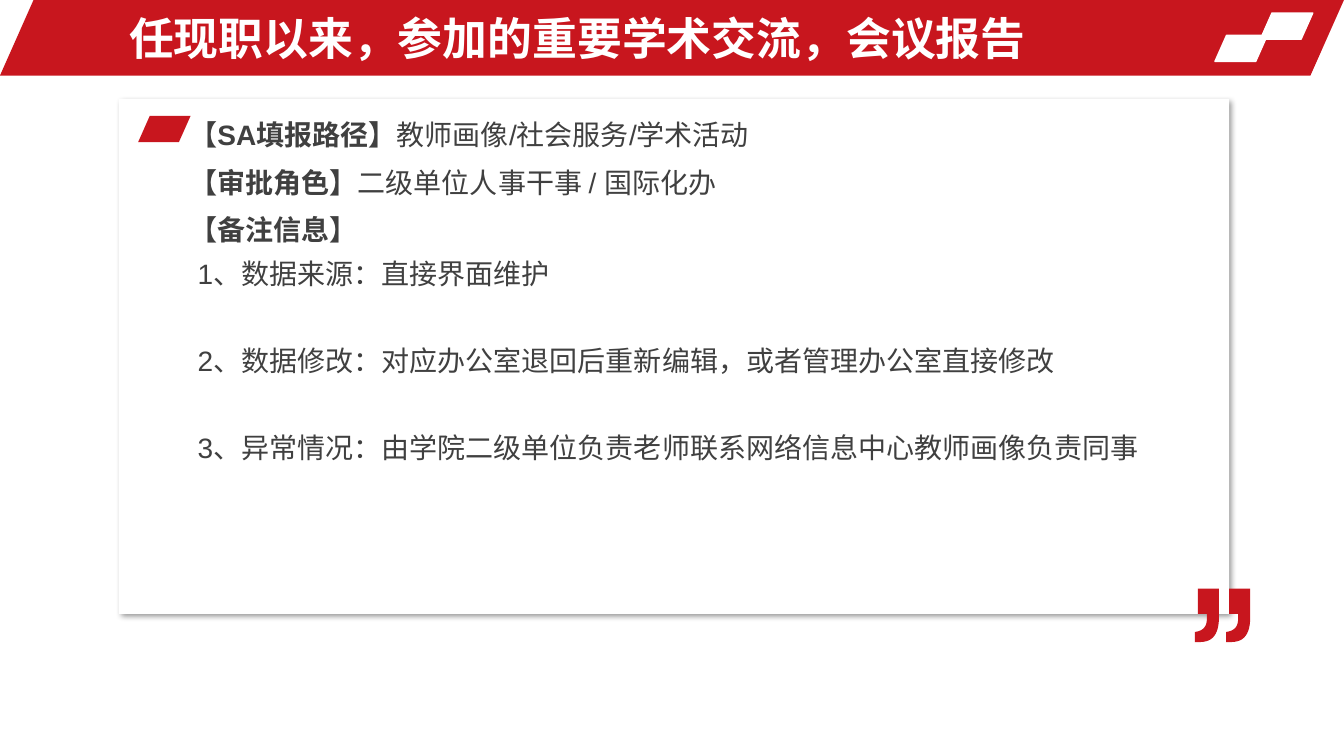
from pptx import Presentation
from pptx.dml.color import RGBColor
from pptx.enum.shapes import MSO_SHAPE
from pptx.enum.text import MSO_ANCHOR, MSO_AUTO_SIZE, PP_ALIGN
from pptx.oxml import parse_xml
from pptx.oxml.ns import nsdecls
from pptx.util import Inches, Pt

PARALLELOGRAM = MSO_SHAPE.PARALLELOGRAM
ROUNDED = MSO_SHAPE.ROUNDED_RECTANGLE
MIDDLE, TOP = MSO_ANCHOR.MIDDLE, MSO_ANCHOR.TOP
GROW, FIXED = MSO_AUTO_SIZE.SHAPE_TO_FIT_TEXT, MSO_AUTO_SIZE.NONE
LEFT = PP_ALIGN.LEFT

COLORS = {"red": "C8161E", "white": "FFFFFF", "text": "404040", "shadow": "000000"}
FONT = "Arial"

TITLE = "任现职以来，参加的重要学术交流，会议报告"
FIELDS = [
    ("【SA填报路径】", "教师画像/社会服务/学术活动"),
    ("【审批角色】", "二级单位人事干事 / 国际化办"),
]
NOTES_HEADING = "【备注信息】"
NOTES = [
    "1、数据来源：直接界面维护",
    "2、数据修改：对应办公室退回后重新编辑，或者管理办公室直接修改",
    "3、异常情况：由学院二级单位负责老师联系网络信息中心教师画像负责同事",
]

TEXT_LEFT, TEXT_TOP, ROW_STEP = 1.78, 1.02, 0.47
NOTE_INDENT, NOTE_GAP = 0.08, 31
CHIP_SIZE = (0.52, 0.26)
QUOTE_LEFT, QUOTE_TOP, QUOTE_STEP = 11.85, 5.84, 0.31


def color(name):
    return RGBColor.from_string(COLORS[name])


def add_block(slide, kind, at, fill, adjust, line=None):
    shape = slide.shapes.add_shape(kind, *map(Inches, at))
    shape.shadow.inherit = False
    shape.adjustments[0] = adjust
    shape.fill.solid()
    shape.fill.fore_color.rgb = color(fill)
    if line:
        shape.line.color.rgb = color(line)
        shape.line.width = Pt(1)
    else:
        shape.line.fill.background()
    return shape


def add_card_shadow(card):
    effects = card._element.spPr.find("{*}effectLst")
    effects.append(parse_xml(
        f'<a:outerShdw {nsdecls("a")} blurRad="{Pt(4)}" dist="{Pt(3)}" dir="2700000" '
        f'algn="tl" rotWithShape="0"><a:srgbClr val="{COLORS["shadow"]}">'
        '<a:alpha val="40000"/></a:srgbClr></a:outerShdw>'))


def write(box, at, paragraphs, size=20, ink="text", spacing=1.3, anchor=TOP, fit=GROW):
    """Fill a box with (spans, indent, space before) paragraphs; a span is (text, bold)."""
    box.left, box.top, box.width, box.height = map(Inches, at)
    frame = box.text_frame
    frame.word_wrap = True
    frame.auto_size = fit
    frame.vertical_anchor = anchor
    for index, (spans, indent, before) in enumerate(paragraphs):
        para = frame.add_paragraph() if index else frame.paragraphs[0]
        properties = para._p.get_or_add_pPr()
        properties.set("marL", str(Inches(indent)))
        properties.set("indent", "0")
        properties.append(parse_xml(f'<a:buNone {nsdecls("a")}/>'))
        para.alignment = LEFT
        para.line_spacing = spacing
        para.space_before = Pt(before)
        for text, bold in spans:
            span = para.add_run()
            span.text = text
            span.font.name = FONT
            span.font.size = Pt(size)
            span.font.bold = bold
            span.font.color.rgb = color(ink)


def bezier(start, first, second, end, steps=12):
    points = []
    for step in range(1, steps + 1):
        t = step / steps
        weights = ((1 - t) ** 3, 3 * t * (1 - t) ** 2, 3 * t * t * (1 - t), t ** 3)
        corners = (start, first, second, end)
        points.append(tuple(sum(w * p[axis] for w, p in zip(weights, corners))
                            for axis in (0, 1)))
    return points


def add_quote_marks(slide):
    outline = [(0.03, 0), (0.24, 0), (0.24, 0.28)]
    outline += bezier((0.24, 0.28), (0.24, 0.45), (0.18, 0.53), (0.05, 0.53))
    outline += [(0, 0.53), (0, 0.43)]
    outline += bezier((0, 0.43), (0.08, 0.42), (0.12, 0.38), (0.12, 0.3))
    outline += [(0.12, 0.25), (0.03, 0.25)]
    builder = None
    for mark in range(2):
        left = QUOTE_LEFT + mark * QUOTE_STEP
        points = [(Inches(left + x), Inches(QUOTE_TOP + y)) for x, y in outline]
        if builder is None:
            builder = slide.shapes.build_freeform(*points[0])
        else:
            builder.move_to(*points[0])
        builder.add_line_segments(points[1:], close=True)
    marks = builder.convert_to_shape()
    marks.shadow.inherit = False
    marks.fill.solid()
    marks.fill.fore_color.rgb = color("red")
    marks.line.fill.background()


def main():
    deck = Presentation()
    deck.slide_width, deck.slide_height = Inches(13.33), Inches(7.5)
    slide = deck.slides.add_slide(deck.slide_layouts[1])
    title, body = slide.placeholders

    add_block(slide, PARALLELOGRAM, (0, 0, 13.33, 0.75), "red", 0.444)
    for left, top in [(12.5, 0.13), (12.05, 0.35)]:
        add_block(slide, PARALLELOGRAM, (left, top, *CHIP_SIZE), "white", 0.444, line="white")
    card = add_block(slide, ROUNDED, (1.18, 0.98, 11.01, 5.11), "white", 0)
    add_card_shadow(card)
    add_quote_marks(slide)
    add_block(slide, PARALLELOGRAM, (1.37, 1.15, *CHIP_SIZE), "red", 0.444)

    # Placeholders come first in the tree, so bring them in front of the band and card.
    for placeholder in (title, body):
        slide.shapes._spTree.append(placeholder._element)
    write(title, (1.18, 0.05, 10, 0.65), [([(TITLE, True)], 0, 0)],
          size=32, ink="white", spacing=1.0, anchor=MIDDLE, fit=FIXED)

    for row, (label, value) in enumerate(FIELDS):
        box = slide.shapes.add_textbox(0, 0, 0, 0)
        write(box, (TEXT_LEFT, TEXT_TOP + row * ROW_STEP, 9.51, 0.54),
              [([(label, True), (value, False)], 0, 0)])

    notes = [([(NOTES_HEADING, True)], 0, 0)]
    for index, note in enumerate(NOTES):
        notes.append(([(note, False)], NOTE_INDENT, NOTE_GAP if index else 0))
    write(body, (TEXT_LEFT, TEXT_TOP + len(FIELDS) * ROW_STEP, 9.73, 2.73), notes)

    deck.save("out.pptx")


if __name__ == "__main__":
    main()
